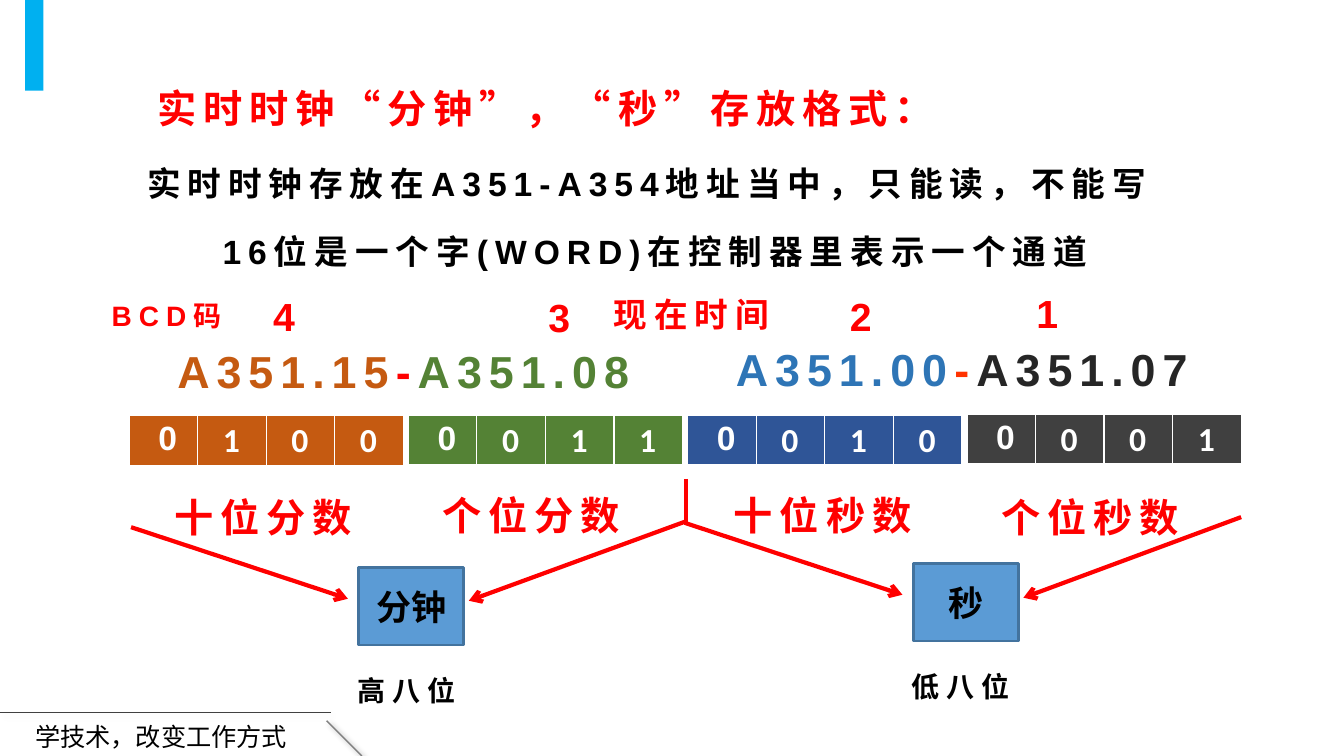
from dataclasses import dataclass
from typing import Optional

from lxml.etree import SubElement
from pptx import Presentation
from pptx.dml.color import RGBColor
from pptx.enum.shapes import MSO_CONNECTOR as CONN, MSO_SHAPE as SHAPE
from pptx.enum.text import MSO_ANCHOR as ANCHOR, MSO_AUTO_SIZE as AUTO, PP_ALIGN as ALIGN
from pptx.oxml.ns import qn
from pptx.util import Emu, Pt

SCALE = 9144  # EMU per px, 100 px to the inch
CJK = "Noto Sans CJK SC"
COLORS = {
    "white": "FFFFFF", "black": "000000", "red": "FF0000", "scarlet": "FF3300",
    "sky": "00B0F0", "box": "5B9BD5", "box_edge": "43739E", "gray": "808080",
    "orange": "C55A11", "green": "548235", "navy": "2F5597", "dark": "404040",
    "blue": "2E75B6", "ink": "262626",
}


@dataclass
class Label:
    x: int
    y: int
    w: int
    h: int
    runs: list[tuple[str, str]]  # text, colour name
    size: int
    wrap: bool = False
    leading: Optional[float] = None
    font: str = "Arial"
    bold: bool = True
    spacing: int = 5


@dataclass
class Line:
    x1: int
    y1: int
    x2: int
    y2: int
    color: str = "red"
    width: float = 3
    arrow: bool = False
    shadow: bool = False


@dataclass
class Digit:
    bits: str
    color: str
    top: int
    name: str
    name_x: int
    name_y: int
    number_x: int
    number_y: int


@dataclass
class Unit:
    text: str
    x: int
    y: int


DIGITS = [
    Digit("0100", "orange", 412, "十位分数", 163, 484, 261, 285),
    Digit("0011", "green", 412, "个位分数", 429, 483, 534, 286),
    Digit("0010", "navy", 412, "十位秒数", 718, 483, 833, 285),
    Digit("0001", "dark", 411, "个位秒数", 983, 484, 1018, 282),
]
UNITS = [Unit("分钟", 356, 563), Unit("秒", 906, 559)]
LABELS = [
    Label(25, 711, 1216, 40, [("学技术，改变工作方式", "black")], 18, wrap=True,
          font=CJK, bold=False, spacing=0),
    Label(146, 79, 807, 57, [("实时时钟“分钟”，“秒”存放格式：", "red")], 28),
    Label(136, 137, 1059, 63, [("实时时钟存放在A351-A354地址当中，只能读，不能写", "black")],
          24, wrap=True, leading=1.5),
    Label(211, 204, 930, 71, [("16位是一个字(WORD)在控制器里表示一个通道", "black")],
          24, wrap=True, leading=1.5),
    Label(101, 291, 137, 44, [("BCD码", "red")], 20),
    Label(599, 287, 183, 50, [("现在时间", "red")], 24),
    Label(166, 336, 479, 64,
          [("A351.15", "orange"), ("-", "red"), ("A351.08", "green")], 32),
    Label(720, 334, 479, 64,
          [("A351.00", "blue"), ("-", "scarlet"), ("A351.07", "ink")], 32),
    Label(345, 647, 129, 61, [("高八位", "black")], 20, wrap=True, leading=1.5),
    Label(894, 643, 129, 61, [("低八位", "black")], 20, wrap=True, leading=1.5),
]
LINES = [
    Line(0, 707, 328, 707, "dark", 0.25, shadow=True),
    Line(324, 715, 359, 750, "gray", 1, shadow=True),
    Line(130, 523, 345, 594, arrow=True),
    Line(681, 517, 465, 596, arrow=True),
    Line(680, 475, 680, 521),
    Line(680, 519, 895, 590, arrow=True),
    Line(1231, 513, 1015, 593, arrow=True),
]


def px(n: int) -> Emu:
    return Emu(n * SCALE)


def rgb(name: str) -> RGBColor:
    return RGBColor.from_string(COLORS[name])


def add_run(p, text: str, size: int, color: str, font: str, bold=True, spacing=0) -> None:
    r = p.add_run()
    r.text = text
    r.font.size, r.font.bold, r.font.name = Pt(size), bold, font
    r.font.color.rgb = rgb(color)
    props = r.font._element
    SubElement(props, qn("a:ea"), typeface=CJK)
    if spacing:
        props.set("spc", str(spacing * 100))


def add_label(slide, label: Label) -> None:
    tf = slide.shapes.add_textbox(*map(px, (label.x, label.y, label.w, label.h))).text_frame
    tf.word_wrap, tf.auto_size = label.wrap, AUTO.SHAPE_TO_FIT_TEXT
    p = tf.paragraphs[0]
    if label.leading:
        p.line_spacing = label.leading
    for text, color in label.runs:
        add_run(p, text, label.size, color, label.font, label.bold, label.spacing)


def add_line(slide, line: Line) -> None:
    s = slide.shapes.add_connector(
        CONN.STRAIGHT, *map(px, (line.x1, line.y1, line.x2, line.y2)))
    s.line.color.rgb, s.line.width = rgb(line.color), Pt(line.width)
    if line.arrow:
        SubElement(s.line._get_or_add_ln(), qn("a:tailEnd"), type="arrow")
    effects = SubElement(s._element.spPr, qn("a:effectLst"))
    if line.shadow:
        shadow = SubElement(effects, qn("a:outerShdw"), blurRad=str(Pt(4)),
                            dist=str(Pt(3)), dir="2700000", rotWithShape="0")
        color = SubElement(shadow, qn("a:srgbClr"), val=COLORS["black"])
        SubElement(color, qn("a:alpha"), val="40000")


def add_box(slide, x: int, y: int, w: int, h: int, fill: str, edge: Optional[str] = None):
    s = slide.shapes.add_shape(SHAPE.RECTANGLE, *map(px, (x, y, w, h)))
    s.shadow.inherit = False
    s.fill.solid()
    s.fill.fore_color.rgb = rgb(fill)
    if edge:
        s.line.color.rgb, s.line.width = rgb(edge), Pt(2)
    else:
        s.line.fill.background()
    return s


def add_bits(slide, digit: Digit, x: int) -> None:
    count = len(digit.bits)
    table = slide.shapes.add_table(1, count, px(x), px(digit.top), px(68 * count), px(50)).table
    table.first_row = table.horz_banding = False
    for i, bit in enumerate(digit.bits):
        table.columns[i].width = px(68)
        cell = table.cell(0, i)
        cell.margin_left = px(25 if i else 29)
        props = cell._tc.get_or_add_tcPr()
        for side, width in (("L", 1), ("R", 1), ("T", 1), ("B", 3)):
            ln = SubElement(props, qn(f"a:ln{side}"), w=str(Pt(width)))
            SubElement(SubElement(ln, qn("a:solidFill")), qn("a:srgbClr"), val=COLORS["white"])
        cell.fill.solid()
        cell.fill.fore_color.rgb = rgb(digit.color)
        add_run(cell.text_frame.paragraphs[0], bit, 24, "white", "Calibri" if i else "Arial")


def add_unit(slide, unit: Unit) -> None:
    tf = add_box(slide, unit.x, unit.y, 104, 77, "box", "box_edge").text_frame
    tf.vertical_anchor = ANCHOR.MIDDLE
    p = tf.paragraphs[0]
    p.alignment = ALIGN.CENTER
    add_run(p, unit.text, 25, "black", "Calibri")


def main() -> None:
    prs = Presentation()
    prs.slide_width, prs.slide_height = px(1333), px(750)
    slide = prs.slides.add_slide(prs.slide_layouts[6])

    # Accent bar
    add_box(slide, 25, 0, 18, 90, "sky")

    # BCD digits: bit cells, place name and number, from 4 down to 1
    for i, digit in enumerate(DIGITS):
        add_bits(slide, digit, 128 + 277 * i)
        add_label(slide, Label(digit.name_x, digit.name_y, 205, 57, [(digit.name, "red")], 28))
        add_label(slide, Label(digit.number_x, digit.number_y, 49, 57,
                               [(str(len(DIGITS) - i), "red")], 28))

    # Headings, addresses and footer
    for label in LABELS:
        add_label(slide, label)

    # Footer rules and arrows to the time units
    for line in LINES:
        add_line(slide, line)
    for unit in UNITS:
        add_unit(slide, unit)

    prs.save("out.pptx")


if __name__ == "__main__":
    main()
